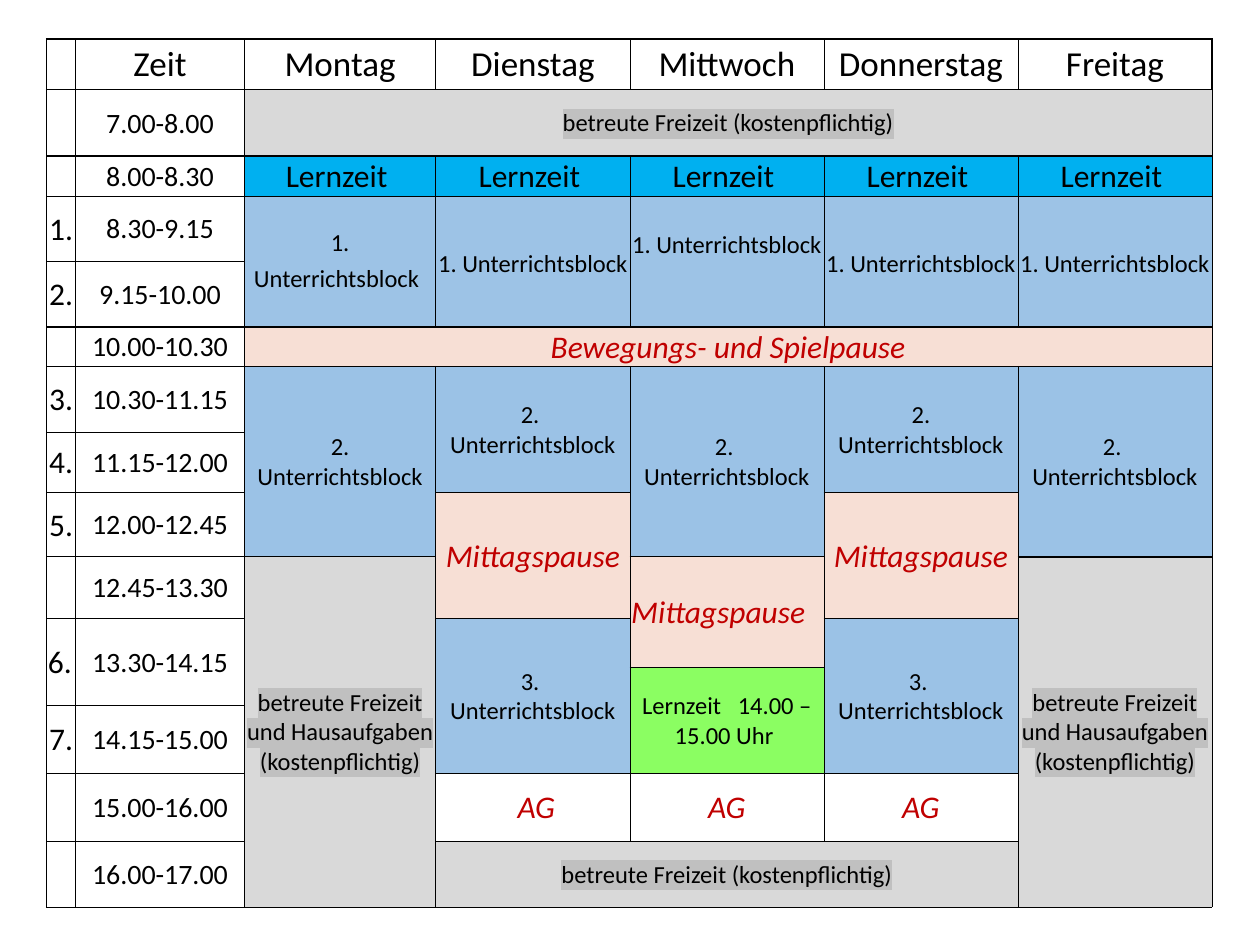
from lxml.etree import SubElement
from pptx import Presentation
from pptx.dml.color import RGBColor
from pptx.enum.text import MSO_ANCHOR, PP_ALIGN
from pptx.oxml import parse_xml
from pptx.oxml.ns import nsdecls, qn
from pptx.util import Inches, Pt

COLORS = {
    "black": "000000", "white": "FFFFFF", "red": "C00000", "gray": "D9D9D9",
    "highlight": "C0C0C0", "cyan": "00B0F0", "blue": "9DC3E6",
    "light_blue": "9BC2E6", "peach": "F7DFD5", "green": "8BFE62",
}
STYLES = {
    "heading": ("white", 20, "black"),
    "time": ("white", 16, "black"),
    "number": ("white", 18, "black"),
    "care": ("gray", 14, "black"),
    "study": ("cyan", 18, "black"),
    "lesson": ("blue", 14, "black"),
    "later_lesson": ("light_blue", 14, "black"),
    "break": ("peach", 18, "red"),
    "study_afternoon": ("green", 14, "black"),
    "club": ("white", 18, "red"),
}
COLUMN_WIDTHS = [0.23, 1.34, 1.52, 1.54, 1.54, 1.54, 1.54]
ROW_HEIGHTS = [0.4, 0.53, 0.3, 0.52, 0.52, 0.3, 0.52, 0.48,
               0.51, 0.49, 0.39, 0.3, 0.54, 0.54, 0.52]
HEADINGS = ["Zeit", "Montag", "Dienstag", "Mittwoch", "Donnerstag", "Freitag"]
TIMES = {
    1: "7.00-8.00", 2: "8.00-8.30", 3: "8.30-9.15", 4: "9.15-10.00",
    5: "10.00-10.30", 6: "10.30-11.15", 7: "11.15-12.00", 8: "12.00-12.45",
    9: "12.45-13.30", 10: "13.30-14.15", 12: "14.15-15.00",
    13: "15.00-16.00", 14: "16.00-17.00",
}
NUMBERS = {3: "1.", 4: "2.", 6: "3.", 7: "4.", 8: "5.", 10: "6.", 12: "7."}
DAYS = range(2, 7)
FRAMED_ROWS = (0, 1, 5)
CARE = "betreute Freizeit (kostenpflichtig)"
CARE_HOMEWORK = "betreute Freizeit und Hausaufgaben\n(kostenpflichtig)"
ENTRIES = [
    (1, 2, 1, 5, CARE, "care"),
    (5, 2, 1, 5, "Bewegungs- und Spielpause", "break"),
    (6, 2, 3, 1, "2.\nUnterrichtsblock", "later_lesson"),
    (6, 3, 2, 1, "2. \nUnterrichtsblock", "later_lesson"),
    (6, 4, 3, 1, "2. \nUnterrichtsblock", "later_lesson"),
    (6, 5, 2, 1, "2.\nUnterrichtsblock", "later_lesson"),
    (6, 6, 3, 1, "2. \nUnterrichtsblock", "later_lesson"),
    (8, 3, 2, 1, "Mittagspause", "break"),
    (8, 5, 2, 1, "Mittagspause", "break"),
    (9, 2, 6, 1, CARE_HOMEWORK, "care"),
    (9, 4, 2, 1, "Mittagspause", "break"),
    (9, 6, 6, 1, CARE_HOMEWORK, "care"),
    (10, 3, 3, 1, "3. \nUnterrichtsblock", "lesson"),
    (10, 5, 3, 1, "3. \nUnterrichtsblock", "later_lesson"),
    (11, 4, 2, 1, "Lernzeit   14.00 – 15.00 Uhr ", "study_afternoon"),
    (13, 3, 1, 1, " AG", "club"),
    (13, 4, 1, 1, "AG", "club"),
    (13, 5, 1, 1, "AG", "club"),
    (14, 3, 1, 3, CARE, "care"),
]
LEFT_ALIGNED = {(9, 4), (10, 0)}


def format_run(run, style, size=None):
    _, default_size, color = STYLES[style]
    font = run.font
    font.size = Pt(size or default_size)
    font.italic = color == "red"
    font.color.rgb = RGBColor.from_string(COLORS[color])
    if style == "care":
        highlight = parse_xml(
            f'<a:highlight {nsdecls("a")}><a:srgbClr val="{COLORS["highlight"]}"/></a:highlight>')
        run.font.fill._xPr.find(qn("a:solidFill")).addnext(highlight)
    font.name = "Calibri"


def fill_cell(cell, color):
    cell.fill.solid()
    cell.fill.fore_color.rgb = RGBColor.from_string(COLORS[color])


def set_borders(cell, row, column):
    framed = row in FRAMED_ROWS
    friday_care = column == 6 and row >= 9
    thick = {
        "a:lnL": framed and column == 0,
        "a:lnR": framed and column == 6,
        "a:lnT": framed or row - 1 in FRAMED_ROWS or (friday_care and row == 9),
        "a:lnB": framed or row + 1 in FRAMED_ROWS or (column == 6 and row in (8, 14)),
    }
    properties = cell._tc.get_or_add_tcPr()
    for position, (tag, is_thick) in enumerate(thick.items()):
        line = SubElement(properties, qn(tag), w=str(Pt(1 if is_thick else 0.5)))
        fill = SubElement(line, qn("a:solidFill"))
        SubElement(fill, qn("a:srgbClr"), val=COLORS["black"])
        properties.insert(position, line)


def prepare_cell(cell, row, column):
    cell.margin_left = cell.margin_right = cell.margin_top = Inches(0.01)
    cell.margin_bottom = 0
    cell.vertical_anchor = MSO_ANCHOR.MIDDLE
    fill_cell(cell, "white")
    set_borders(cell, row, column)


def write_entry(table, row, column, row_span, column_span, text, style):
    cell = table.cell(row, column)
    if row_span > 1 or column_span > 1:
        cell.merge(table.cell(row + row_span - 1, column + column_span - 1))
    fill_cell(cell, STYLES[style][0])
    cell.text_frame.text = text
    for paragraph in cell.text_frame.paragraphs:
        paragraph.alignment = PP_ALIGN.LEFT if (row, column) in LEFT_ALIGNED else PP_ALIGN.CENTER
        for run in paragraph.runs:
            format_run(run, style)
    return cell


def write_first_lesson(table, column):
    cell = write_entry(table, 3, column, 2, 1, "1. Unterrichtsblock", "lesson")
    space = cell.text_frame.paragraphs[0].add_run()
    space.text = "  " if column == 4 else " "
    format_run(space, "lesson", 18)


def add_timetable(slide):
    shape = slide.shapes.add_table(
        len(ROW_HEIGHTS), len(COLUMN_WIDTHS), Inches(0.37), Inches(0.31),
        Inches(sum(COLUMN_WIDTHS)), Inches(sum(ROW_HEIGHTS)))
    table = shape.table
    table.first_row = table.horz_banding = False
    for column, width in zip(table.columns, COLUMN_WIDTHS):
        column.width = Inches(width)
    for row, height in zip(table.rows, ROW_HEIGHTS):
        row.height = Inches(height)
    for row in range(len(ROW_HEIGHTS)):
        for column in range(len(COLUMN_WIDTHS)):
            prepare_cell(table.cell(row, column), row, column)
    return table


def main():
    presentation = Presentation()
    presentation.slide_width = Inches(10)
    presentation.slide_height = Inches(7.5)
    slide = presentation.slides.add_slide(presentation.slide_layouts[6])
    table = add_timetable(slide)
    for column, heading in enumerate(HEADINGS, 1):
        write_entry(table, 0, column, 1, 1, heading, "heading")
    for column, texts, style in ((0, NUMBERS, "number"), (1, TIMES, "time")):
        for row, text in texts.items():
            write_entry(table, row, column, 2 if row == 10 else 1, 1, text, style)
    for column in DAYS:
        write_entry(table, 2, column, 1, 1, "Lernzeit ", "study")
        write_first_lesson(table, column)
    for entry in ENTRIES:
        write_entry(table, *entry)
    presentation.save("out.pptx")


if __name__ == "__main__":
    main()
